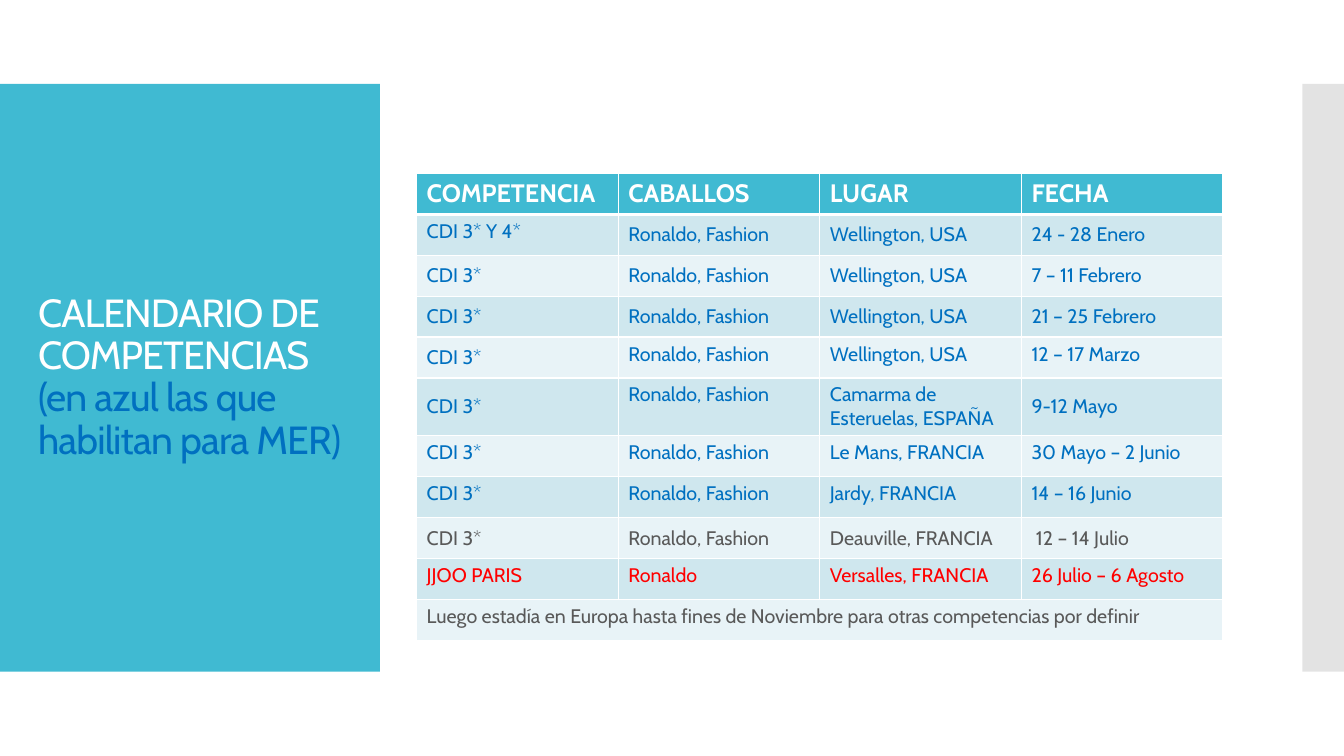
import dataclasses

import lxml.etree
import pptx
import pptx.dml.color
import pptx.enum.shapes
import pptx.enum.text
import pptx.oxml.ns
import pptx.util


@dataclasses.dataclass(frozen=True)
class Theme:
    """Colours and type sizes of the slide."""

    font: str = "Cabin"
    teal: str = "40BAD2"
    gray: str = "C8C8C8"
    white: str = "FFFFFF"
    blue: str = "0070C0"
    red: str = "FF0000"
    text: str = "595959"
    bands: tuple = ("CFE7EE", "E8F3F7")
    title_size: float = 28
    header_size: float = 18
    body_size: float = 14


THEME = Theme()
TOP, MIDDLE = pptx.enum.text.MSO_ANCHOR.TOP, pptx.enum.text.MSO_ANCHOR.MIDDLE
ROW_HEIGHT = 29.2
TALL_ROW_HEIGHT = 40.6
HEADINGS = ("COMPETENCIA", "CABALLOS", "LUGAR", "FECHA")
PAIR = "Ronaldo, Fashion"
WELLINGTON = "Wellington, USA"
CLOSING = "Luego estadía en Europa hasta fines de Noviembre para otras competencias por definir"
EVENTS = (
    (("CDI 3* Y 4*", PAIR, WELLINGTON, "24 - 28 Enero"), "TMMM", THEME.blue),
    (("CDI 3*", PAIR, WELLINGTON, "7 – 11 Febrero"), "MMMM", THEME.blue),
    (("CDI 3*", PAIR, WELLINGTON, "21 – 25 Febrero"), "MMMM", THEME.blue),
    (("CDI 3*", PAIR, WELLINGTON, "12 – 17 Marzo"), "MTTT", THEME.blue),
    (("CDI 3*", PAIR, "Camarma de Esteruelas, ESPAÑA", "9-12 Mayo"), "MTTM", THEME.blue),
    (("CDI 3*", PAIR, "Le Mans, FRANCIA", "30 Mayo – 2 Junio"), "TTTT", THEME.blue),
    (("CDI 3*", PAIR, "Jardy, FRANCIA", "14 – 16 Junio"), "TTTT", THEME.blue),
    (("CDI 3*", PAIR, "Deauville, FRANCIA", " 12 – 14 Julio"), "MMMM", THEME.text),
    (("JJOO PARIS", "Ronaldo", "Versalles, FRANCIA", "26 Julio – 6 Agosto"), "TTTT", THEME.red),
    ((CLOSING, "", "", ""), "TTTT", THEME.text),
)
TALL_ROW = 5


def rgb(color):
    """Return a colour object for a hex string."""
    return pptx.dml.color.RGBColor.from_string(color)


def points(*lengths):
    """Convert lengths in points."""
    return [pptx.util.Pt(length) for length in lengths]


def add_run(paragraph, text, size, color, bold=False):
    """Add one formatted run and return it."""
    run = paragraph.add_run()
    run.text = text
    run.font.name = THEME.font
    run.font.size = pptx.util.Pt(size)
    run.font.bold = bold
    run.font.color.rgb = rgb(color)
    return run


def add_panel(slide, box, color, opacity=100):
    """Add a plain rectangle behind the title."""
    panel = slide.shapes.add_shape(pptx.enum.shapes.MSO_SHAPE.RECTANGLE, *points(*box))
    panel.shadow.inherit = False
    panel.fill.solid()
    panel.fill.fore_color.rgb = rgb(color)
    panel.line.fill.background()
    if opacity < 100:
        tint = panel.element.spPr.find(".//" + pptx.oxml.ns.qn("a:srgbClr"))
        lxml.etree.SubElement(tint, pptx.oxml.ns.qn("a:alpha"), val=str(opacity * 1000))
    slide.shapes.title.element.addprevious(panel.element)


def add_title_panel(slide, box):
    """Place the teal panel and the title inside it."""
    left, top, width, height = box
    add_panel(slide, box, THEME.teal)
    title = slide.shapes.title
    title.left, title.top, title.width, title.height = points(
        left + 20, top + 28.8, width - 39.6, height - 57.6)
    frame = title.text_frame
    frame.word_wrap = True
    frame.auto_size = pptx.enum.text.MSO_AUTO_SIZE.NONE
    frame.vertical_anchor = MIDDLE
    paragraph = frame.paragraphs[0]
    paragraph.alignment = pptx.enum.text.PP_ALIGN.LEFT
    paragraph.line_spacing = 0.9
    heading = add_run(paragraph, "CALENDARIO DE COMPETENCIAS", THEME.title_size, THEME.white)
    paragraph.add_line_break()
    note = add_run(paragraph, "(en azul las que habilitan para MER)", THEME.title_size, THEME.blue)
    for run in (heading, note):
        run.font._element.set("spc", "-60")


def set_borders(cell, top, bottom):
    """Give a cell white borders, with its own top and bottom widths."""
    properties = cell._tc.get_or_add_tcPr()
    for index, (side, width) in enumerate((("L", 1), ("R", 1), ("T", top), ("B", bottom))):
        line = lxml.etree.Element(pptx.oxml.ns.qn("a:ln" + side), w=str(pptx.util.Pt(width)))
        fill = lxml.etree.SubElement(line, pptx.oxml.ns.qn("a:solidFill"))
        lxml.etree.SubElement(fill, pptx.oxml.ns.qn("a:srgbClr"), val=THEME.white)
        properties.insert(index, line)


def fill_cell(cell, text, anchor, fill, size, color, bold=False):
    """Set the fill, anchor and text of a cell."""
    cell.fill.solid()
    cell.fill.fore_color.rgb = rgb(fill)
    cell.vertical_anchor = anchor
    if text:
        add_run(cell.text_frame.paragraphs[0], text, size, color, bold)


def add_calendar(slide, box):
    """Add the table of competitions."""
    row_count = len(EVENTS) + 1
    table = slide.shapes.add_table(row_count, len(HEADINGS), *points(*box)).table
    table.horz_banding = False
    for column in table.columns:
        column.width = pptx.util.Pt(box[2] / len(HEADINGS))
    for index, row in enumerate(table.rows):
        row.height = pptx.util.Pt(TALL_ROW_HEIGHT if index == TALL_ROW else ROW_HEIGHT)
    for column, heading in enumerate(HEADINGS):
        cell = table.cell(0, column)
        fill_cell(cell, heading, TOP, THEME.teal, THEME.header_size, THEME.white, True)
        set_borders(cell, 1, 3)
    for index, (texts, anchors, color) in enumerate(EVENTS):
        for column, (text, anchor) in enumerate(zip(texts, anchors)):
            cell = table.cell(index + 1, column)
            fill_cell(cell, text, MIDDLE if anchor == "M" else TOP,
                      THEME.bands[index % 2], THEME.body_size, color)
            set_borders(cell, 1 if index else 3, 1)
    last = row_count - 1
    table.cell(last, 0).merge(table.cell(last, len(HEADINGS) - 1))


def main():
    """Build and save the presentation."""
    presentation = pptx.Presentation()
    presentation.slide_width, presentation.slide_height = points(960, 540)
    slide = presentation.slides.add_slide(presentation.slide_layouts[5])
    add_title_panel(slide, (0, 60, 271.4, 419.8))
    add_panel(slide, (930.2, 60, 29.8, 419.8), THEME.gray, 50)
    add_calendar(slide, (297.6, 124, 576, 332.6))
    presentation.save("out.pptx")


if __name__ == "__main__":
    main()
